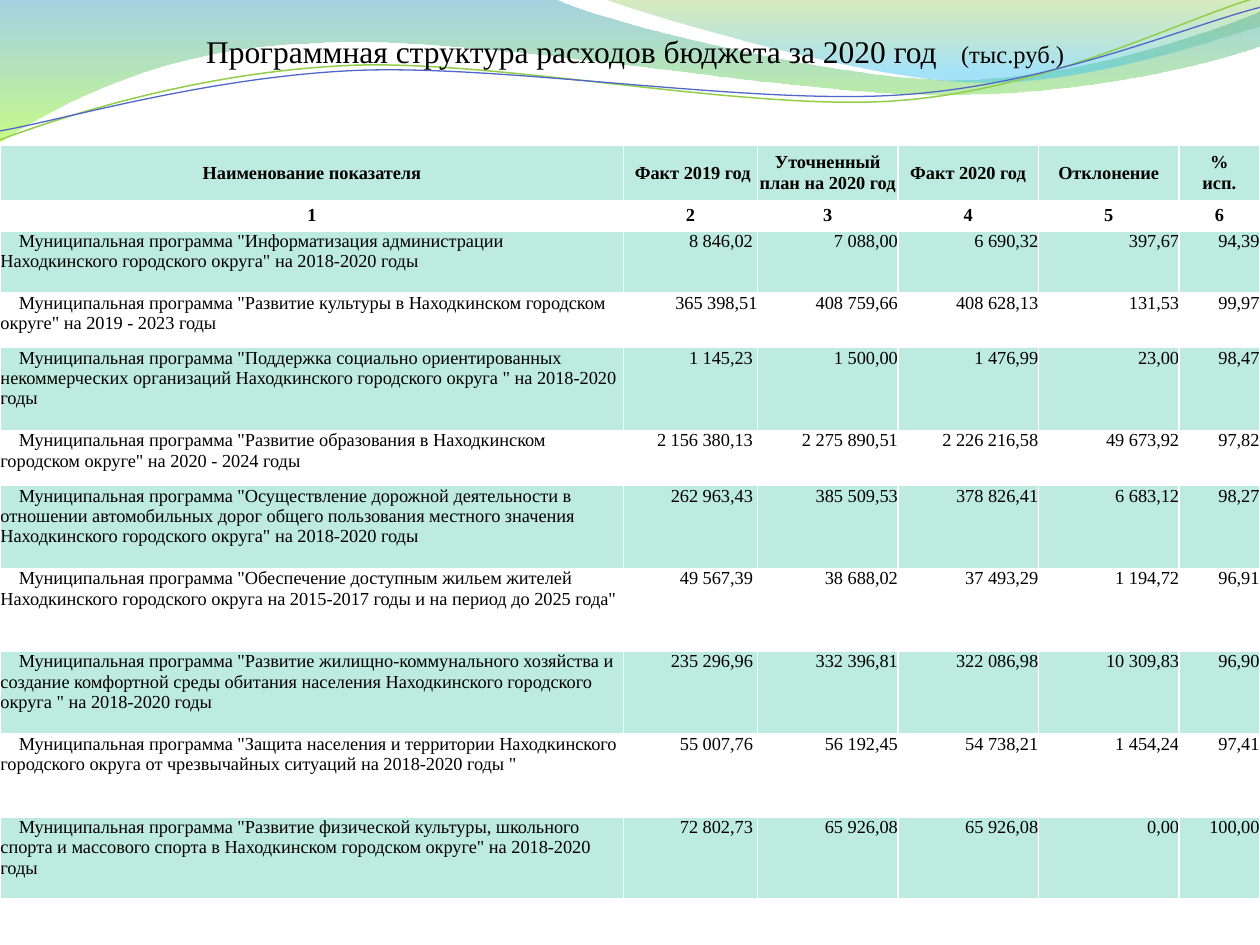
from itertools import product

from lxml import etree
from pptx import Presentation
from pptx import util as u
from pptx.dml import color
from pptx.enum import text
from pptx.oxml import ns

COLORS = {
    "text": "000000", "band": "BEEBDF", "border": "FFFFFF",
    "teal": "3B9CBF", "lime": "9CFA24", "olive": "7EBE2C", "sky": "39C1F1",
    "green_line": "93CE48", "blue_line": "4E67C8",
}
FONT = "Times New Roman"
PROGRAM = "Муниципальная программа "

# Wave outlines in cm: a pair is a corner, a row of six is a Bezier curve
BROAD_WAVE = [
    (0, 0), (11.18, -0.03),
    (12.09, 0.43, 16.87, 1.6, 19.25, 1.6), (21.67, 1.6, 24.33, 0.66, 25.4, 0.23),
    (25.43, 0.91),
    (24.97, 1.12, 22.1, 1.93, 18.95, 1.91), (15.8, 1.91, 9.7, 0.71, 6.53, 0.86),
    (3.28, 0.91, 1.17, 2.11, -0.03, 2.87),
]
RIGHT_WAVE = [
    (12.17, -0.03), (12.93, 0.28, 17.32, 1.57, 19.53, 1.65),
    (21.74, 1.75, 24.41, 0.81, 25.4, 0.53), (25.4, 0),
]
GREEN_LINE = [
    (0, 2.82), (1.22, 2.36, 4.01, 1.45, 7.04, 1.32),
    (10.03, 1.19, 15.06, 2.26, 18.11, 2.03), (21.16, 1.8, 23.83, 0.38, 25.35, -0.05),
]
BLUE_LINE = [
    (0, 2.64), (1.19, 2.44, 4.17, 1.55, 7.19, 1.42),
    (10.24, 1.3, 15.16, 2.13, 18.21, 1.91), (21.23, 1.7, 23.9, 0.53, 25.4, 0.15),
]

COLUMN_WIDTHS = [12.56, 2.7, 2.83, 2.83, 2.84, 1.62]
ROW_HEIGHTS = [1.11, 0.62, 1.24, 1.11, 1.67, 1.11] + [1.67] * 4 + [1.65]
HEADERS = ["Наименование показателя", " Факт 2019 год", "Уточненный план на 2020 год",
           "Факт 2020 год", "Отклонение", "%\vисп."]
PROGRAMS = [
    ('"Информатизация администрации Находкинского городского округа" на 2018-2020 годы',
     "8 846,02 ", "7 088,00", "6 690,32", "397,67", "94,39"),
    ('"Развитие культуры в Находкинском городском округе" на 2019 - 2023 годы',
     " 365 398,51", "408 759,66", "408 628,13", "131,53", "99,97"),
    ('"Поддержка социально ориентированных некоммерческих организаций '
     'Находкинского городского округа " на 2018-2020 годы',
     "1 145,23 ", "1 500,00", "1 476,99", "23,00", "98,47"),
    ('"Развитие образования в Находкинском городском округе" на 2020 - 2024 годы',
     "2 156 380,13 ", "2 275 890,51", "2 226 216,58", "49 673,92", "97,82"),
    ('"Осуществление дорожной деятельности в отношении автомобильных дорог общего '
     'пользования местного значения Находкинского городского округа" на 2018-2020 годы',
     "262 963,43 ", "385 509,53", "378 826,41", "6 683,12", "98,27"),
    ('"Обеспечение доступным жильем жителей Находкинского городского округа '
     'на 2015-2017 годы и на период до 2025 года"',
     "49 567,39 ", "38 688,02", "37 493,29", "1 194,72", "96,91"),
    ('"Развитие жилищно-коммунального хозяйства и создание комфортной среды обитания '
     'населения Находкинского городского округа " на 2018-2020 годы',
     "235 296,96 ", "332 396,81", "322 086,98", "10 309,83", "96,90"),
    ('"Защита населения и территории Находкинского городского округа '
     'от чрезвычайных ситуаций на 2018-2020 годы "',
     "55 007,76 ", "56 192,45", "54 738,21", "1 454,24", "97,41"),
    ('"Развитие физической культуры, школьного спорта и массового спорта '
     'в Находкинском городском округе" на 2018-2020 годы',
     "72 802,73 ", "65 926,08", "65 926,08", "0,00", "100,00"),
]


def rgb(name):
    return color.RGBColor.from_string(COLORS[name])


def set_values(target, values):
    for key, value in values.items():
        setattr(target, key, value)


def set_font(run, size, bold=False):
    set_values(run.font, {"name": FONT, "size": u.Pt(size), "bold": bold})
    run.font.color.rgb = rgb("text")


def add_outline(slide, box, outline, close):
    left, top = box
    points = [(u.Cm(left + x), u.Cm(top + y))
              for part in outline for x, y in zip(part[::2], part[1::2])]
    builder = slide.shapes.build_freeform(*points[0])
    builder.add_line_segments(points[1:], close=close)
    shape = builder.convert_to_shape()
    shape.shadow.inherit = False
    # Join each curve's three points into one Bezier segment
    segments = iter(list(shape._element.iter(ns.qn("a:lnTo"))))
    for part in outline[1:]:
        first = next(segments)
        if len(part) == 6:
            first.tag = ns.qn("a:cubicBezTo")
            for _ in range(2):
                extra = next(segments)
                first.append(extra[0])
                extra.getparent().remove(extra)
    return shape


def add_waves(slide, box):
    # Translucent bands: colour, position and opacity of each gradient stop
    bands = [
        (BROAD_WAVE, [("teal", 0, 45), ("lime", 1, 55)]),
        (RIGHT_WAVE, [("olive", 0, 30), ("sky", 0.8, 45)]),
    ]
    for outline, stops in bands:
        band = add_outline(slide, box, outline, close=True)
        band.line.fill.background()
        band.fill.gradient()
        band.fill.gradient_angle = 270
        for stop, (name, position, _) in zip(band.fill.gradient_stops, stops):
            stop.color.rgb = rgb(name)
            stop.position = position
        for node, (_, _, opacity) in zip(band._element.spPr.iter(ns.qn("a:srgbClr")), stops):
            etree.SubElement(node, ns.qn("a:alpha"), val=str(opacity * 1000))
    # Thin curves
    for outline, name, width in [(GREEN_LINE, "green_line", 0.85), (BLUE_LINE, "blue_line", 0.75)]:
        curve = add_outline(slide, box, outline, close=False)
        curve.fill.background()
        curve.line.color.rgb = rgb(name)
        curve.line.width = u.Pt(width)


def add_title(slide, box):
    title = slide.shapes.title
    set_values(title, dict(zip(("left", "top", "width", "height"), map(u.Cm, box))))
    frame = title.text_frame
    set_values(frame, {"word_wrap": True, "vertical_anchor": text.MSO_ANCHOR.TOP,
                       "auto_size": text.MSO_AUTO_SIZE.SHAPE_TO_FIT_TEXT})
    heading = frame.paragraphs[0]
    heading.alignment = text.PP_ALIGN.LEFT
    for words, size in [("Программная структура расходов бюджета за 2020 год\t", 18),
                        ("(тыс.руб.)", 14)]:
        run = heading.add_run()
        run.text = words
        set_font(run, size)
    # Tab stop in front of the unit
    tabs = etree.SubElement(heading._p.get_or_add_pPr(), ns.qn("a:tabLst"))
    etree.SubElement(tabs, ns.qn("a:tab"), pos=str(u.Cm(15.22)), algn="l")
    # Bring the title in front of the waves
    slide.shapes._spTree.append(title._element)


def add_borders(cell):
    for side in ("lnL", "lnR", "lnT", "lnB"):
        border = etree.SubElement(cell._tc.get_or_add_tcPr(), ns.qn("a:" + side),
                                  w=str(u.Pt(1)))
        fill = etree.SubElement(border, ns.qn("a:solidFill"))
        etree.SubElement(fill, ns.qn("a:srgbClr"), val=COLORS["border"])


def add_budget_table(slide, box):
    numbers = [str(n + 1) for n in range(len(HEADERS))]
    rows = [HEADERS, numbers] + [(PROGRAM + name, *values) for name, *values in PROGRAMS]
    table = slide.shapes.add_table(len(rows), len(HEADERS), *map(u.Cm, box)).table
    set_values(table, {"first_row": False, "horz_banding": False})
    for column, width in zip(table.columns, COLUMN_WIDTHS):
        column.width = u.Cm(width)
    for row, height in zip(table.rows, ROW_HEIGHTS):
        row.height = u.Cm(height)

    for r, c in product(range(len(rows)), range(len(HEADERS))):
        cell, is_header = table.cell(r, c), r < 2
        anchor = text.MSO_ANCHOR.MIDDLE if is_header else text.MSO_ANCHOR.TOP
        set_values(cell, {"text": rows[r][c], "vertical_anchor": anchor, "margin_left": 0,
                          "margin_right": 0, "margin_top": 0, "margin_bottom": 0})
        add_borders(cell)
        if r % 2 == 0:
            cell.fill.solid()
            cell.fill.fore_color.rgb = rgb("band")
        else:
            cell.fill.background()
        paragraph = cell.text_frame.paragraphs[0]
        if is_header:
            paragraph.alignment = text.PP_ALIGN.CENTER
        elif c:
            paragraph.alignment = text.PP_ALIGN.RIGHT
        else:
            paragraph.alignment = text.PP_ALIGN.LEFT
            paragraph._p.get_or_add_pPr().set("indent", str(u.Cm(0.37)))
        for run in paragraph.runs:
            set_font(run, 10.5, bold=is_header)


def main():
    deck = Presentation()
    deck.slide_width, deck.slide_height = u.Cm(25.4), u.Cm(19.05)
    slide = deck.slides.add_slide(deck.slide_layouts[5])
    add_waves(slide, (0, 0))
    add_budget_table(slide, (0.01, 2.93, 25.38, 15.2))
    add_title(slide, (3.9, 0.51, 19, 1.02))
    deck.save("out.pptx")


if __name__ == "__main__":
    main()
